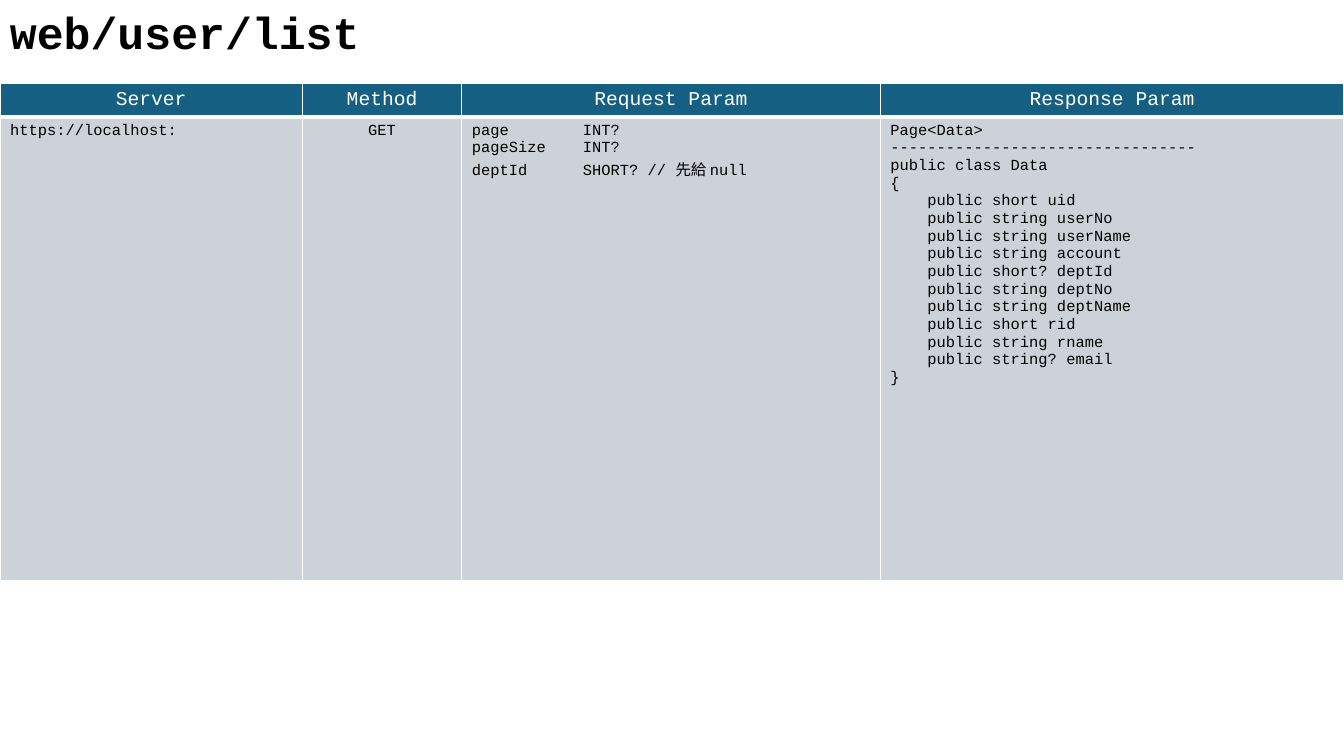
from lxml.etree import SubElement
from pptx import Presentation
from pptx.dml.color import RGBColor
from pptx.enum.text import MSO_AUTO_SIZE, PP_ALIGN
from pptx.oxml.ns import qn
from pptx.util import Inches, Pt

TEAL = RGBColor(0x15, 0x60, 0x82)
GRAY = RGBColor(0xCC, 0xD2, 0xD8)
WHITE = RGBColor(0xFF, 0xFF, 0xFF)
BLACK = RGBColor(0x00, 0x00, 0x00)

TITLE = "web/user/list"
HEADERS = ["Server", "Method", "Request Param", "Response Param"]
DETAILS = [
    ["https://localhost:"],
    ["GET"],
    ["page\tINT?", "pageSize\tINT?", "deptId\tSHORT? // 先給 null"],
    [
        "Page<Data>",
        "---------------------------------",
        "public class Data",
        "{",
        "    public short uid",
        "    public string userNo",
        "    public string userName",
        "    public string account",
        "    public short? deptId",
        "    public string deptNo",
        "    public string deptName",
        "    public short rid",
        "    public string rname",
        "    public string? email",
        "}",
    ],
]
COLUMN_WIDTHS = [3, 1.58, 4.15, 4.6]
ROW_HEIGHTS = [0.33, 4.6]
TYPE_TAB = 1.1
CENTER, LEFT = PP_ALIGN.CENTER, PP_ALIGN.LEFT
DETAIL_ALIGNMENTS = [LEFT, CENTER, LEFT, LEFT]

TITLE_FORMAT = {"name": "Courier New", "size": Pt(32), "bold": True}
HEADER_FORMAT = {"name": "Courier New", "size": Pt(14), "bold": False}
DETAIL_FORMAT = {"name": "Courier New", "size": Pt(11), "bold": False}


def write_lines(frame, lines, alignment, font_format, color):
    for index, line in enumerate(lines):
        para = frame.paragraphs[0] if index == 0 else frame.add_paragraph()
        para.alignment = alignment
        if "\t" in line:
            tabs = SubElement(para._p.get_or_add_pPr(), qn("a:tabLst"))
            SubElement(tabs, qn("a:tab"), pos=str(Inches(TYPE_TAB)), algn="l")
        span = para.add_run()
        span.text = line
        for name, value in font_format.items():
            setattr(span.font, name, value)
        span.font.color.rgb = color


def draw_borders(cell, bottom_width):
    properties = cell._tc.get_or_add_tcPr()
    widths = {"lnL": 1, "lnR": 1, "lnT": 1, "lnB": bottom_width}
    for side, width in widths.items():
        line = SubElement(properties, qn(f"a:{side}"), w=str(Pt(width)))
        fill = SubElement(line, qn("a:solidFill"))
        SubElement(fill, qn("a:srgbClr"), val=str(WHITE))


def main():
    deck = Presentation()
    deck.slide_width, deck.slide_height = Inches(13.33), Inches(7.5)
    page = deck.slides.add_slide(deck.slide_layouts[6])

    box = page.shapes.add_textbox(0, 0, Inches(9.45), Inches(0.64))
    box.text_frame.word_wrap = True
    box.text_frame.auto_size = MSO_AUTO_SIZE.SHAPE_TO_FIT_TEXT
    write_lines(box.text_frame, [TITLE], LEFT, TITLE_FORMAT, BLACK)

    table = page.shapes.add_table(
        len(ROW_HEIGHTS), len(HEADERS), 0, Inches(0.83),
        Inches(sum(COLUMN_WIDTHS)), Inches(sum(ROW_HEIGHTS)),
    ).table
    for column, width in zip(table.columns, COLUMN_WIDTHS):
        column.width = Inches(width)
    for row, height in zip(table.rows, ROW_HEIGHTS):
        row.height = Inches(height)

    rows = [
        ([[header] for header in HEADERS], [CENTER] * len(HEADERS),
         HEADER_FORMAT, WHITE, TEAL, 3),
        (DETAILS, DETAIL_ALIGNMENTS, DETAIL_FORMAT, BLACK, GRAY, 1),
    ]
    for row, (texts, alignments, font_format, color, shade, bottom) in zip(table.rows, rows):
        for cell, lines, alignment in zip(row.cells, texts, alignments):
            draw_borders(cell, bottom)
            cell.fill.solid()
            cell.fill.fore_color.rgb = shade
            write_lines(cell.text_frame, lines, alignment, font_format, color)

    deck.save("out.pptx")


if __name__ == "__main__":
    main()
